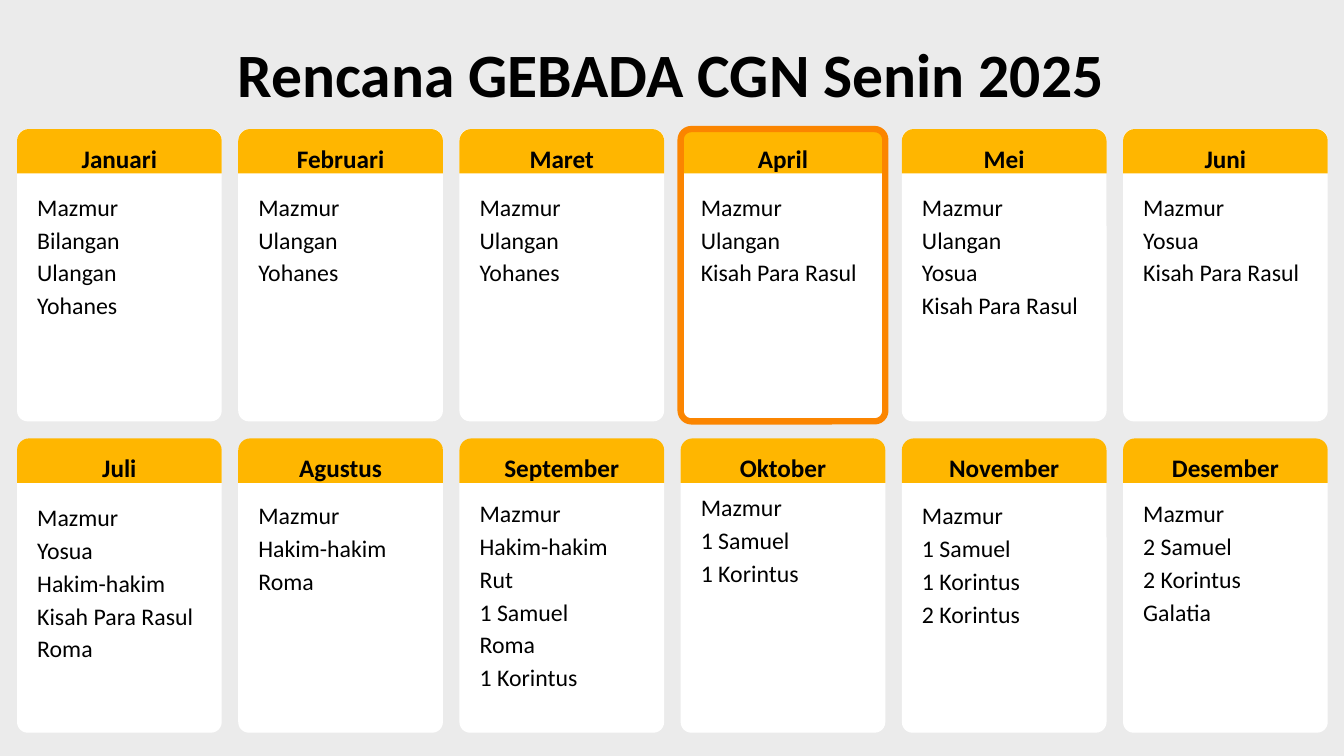
from dataclasses import dataclass

from pptx import Presentation
from pptx.dml.color import RGBColor
from pptx.enum.shapes import MSO_SHAPE
from pptx.enum.text import MSO_ANCHOR, MSO_AUTO_SIZE, PP_ALIGN
from pptx.util import Pt


@dataclass(frozen=True)
class Theme:
    font: str = "Calibri"
    background: RGBColor = RGBColor(0xEB, 0xEB, 0xEB)
    card: RGBColor = RGBColor(0xFF, 0xFF, 0xFF)
    header: RGBColor = RGBColor(0xFF, 0xB6, 0x00)
    highlight: RGBColor = RGBColor(0xFB, 0x85, 0x00)
    text: RGBColor = RGBColor(0x00, 0x00, 0x00)
    title_size: float = 44
    month_size: float = 18
    book_size: float = 17


THEME = Theme()

COLUMNS = 6
LEFT, COLUMN_PITCH = 12.2, 158
CARD_WIDTH, CARD_HEIGHT = 146.2, 208.8
CARD_TOPS = (92.2, 314.6)
HEADER_TOPS = (92.2, 313.2)
HEADER_HEIGHT = 31.7
CURRENT_MONTH = "April"

READING_PLAN = [
    ("Januari", 137.5, ["Mazmur", "Bilangan", "Ulangan", "Yohanes"]),
    ("Februari", 137.5, ["Mazmur", "Ulangan", "Yohanes"]),
    ("Maret", 137.5, ["Mazmur", "Ulangan", "Yohanes"]),
    ("April", 137.5, ["Mazmur", "Ulangan", "Kisah Para Rasul"]),
    ("Mei", 137.5, ["Mazmur", "Ulangan", "Yosua", "Kisah Para Rasul"]),
    ("Juni", 137.5, ["Mazmur", "Yosua", "Kisah Para Rasul"]),
    ("Juli", 359.3, ["Mazmur", "Yosua", "Hakim-hakim", "Kisah Para Rasul", "Roma"]),
    ("Agustus", 357.8, ["Mazmur", "Hakim-hakim", "Roma"]),
    ("September", 356.4,
     ["Mazmur", "Hakim-hakim", "Rut", "1 Samuel", "Roma", "1 Korintus"]),
    ("Oktober", 352.1, ["Mazmur", "1 Samuel", "1 Korintus"]),
    ("November", 357.8, ["Mazmur", "1 Samuel", "1 Korintus", "2 Korintus"]),
    ("Desember", 356.4, ["Mazmur", "2 Samuel", "2 Korintus", "Galatia"]),
]


def write_lines(frame, lines, size, bold=False, align=PP_ALIGN.LEFT,
                space_after=0, inset_left=0, inset_top=0):
    frame.text = "\n".join(lines)
    frame.word_wrap = True
    frame.auto_size = MSO_AUTO_SIZE.NONE
    frame.vertical_anchor = MSO_ANCHOR.TOP
    frame.margin_left, frame.margin_top = Pt(inset_left), Pt(inset_top)
    frame.margin_right = frame.margin_bottom = Pt(0)
    for paragraph in frame.paragraphs:
        paragraph.alignment = align
        paragraph.space_after = Pt(space_after)
        for run in paragraph.runs:
            run.font.name = THEME.font
            run.font.size = Pt(size)
            run.font.bold = bold
            run.font.color.rgb = THEME.text


def add_panel(slide, preset, left, top, height, corners, fill=None, outline=None):
    panel = slide.shapes.add_shape(
        preset, Pt(left), Pt(top), Pt(CARD_WIDTH), Pt(height))
    panel.shadow.inherit = False
    for index, corner in enumerate(corners):
        panel.adjustments[index] = corner
    if fill is None:
        panel.fill.background()
    else:
        panel.fill.solid()
        panel.fill.fore_color.rgb = fill
    if outline is None:
        panel.line.fill.background()
    else:
        panel.line.color.rgb = outline
        panel.line.width = Pt(4.5)
    return panel


def add_title(slide, wording):
    title = slide.shapes.title
    title.left, title.top = Pt(18), Pt(25.9)
    title.width, title.height = Pt(923), Pt(53.3)
    write_lines(title.text_frame, [wording], THEME.title_size,
                bold=True, align=PP_ALIGN.CENTER)


def add_books(slide, left, top, books):
    reading = slide.shapes.add_textbox(
        Pt(left), Pt(top), Pt(CARD_WIDTH), Pt(23.75 * len(books)))
    write_lines(reading.text_frame, books, THEME.book_size,
                space_after=3, inset_left=14.4)


def add_month(slide, position, month, books_top, books):
    row, column = divmod(position, COLUMNS)
    left = LEFT + column * COLUMN_PITCH
    card_place = (MSO_SHAPE.ROUNDED_RECTANGLE, left, CARD_TOPS[row],
                  CARD_HEIGHT, [0.052])
    add_panel(slide, *card_place, fill=THEME.card)
    header = add_panel(slide, MSO_SHAPE.ROUND_2_SAME_RECTANGLE, left,
                       HEADER_TOPS[row], HEADER_HEIGHT, [0.267, 0],
                       fill=THEME.header)
    write_lines(header.text_frame, [month], THEME.month_size, bold=True,
                align=PP_ALIGN.CENTER, inset_top=7.5)
    add_books(slide, left, books_top, books)
    if month == CURRENT_MONTH:
        add_panel(slide, *card_place, outline=THEME.highlight)


def main():
    presentation = Presentation()
    presentation.slide_width, presentation.slide_height = Pt(960), Pt(540)
    slide = presentation.slides.add_slide(presentation.slide_layouts[5])
    slide.background.fill.solid()
    slide.background.fill.fore_color.rgb = THEME.background
    add_title(slide, "Rencana GEBADA CGN Senin 2025")
    for position, (month, books_top, books) in enumerate(READING_PLAN):
        add_month(slide, position, month, books_top, books)
    presentation.save("out.pptx")


if __name__ == "__main__":
    main()
